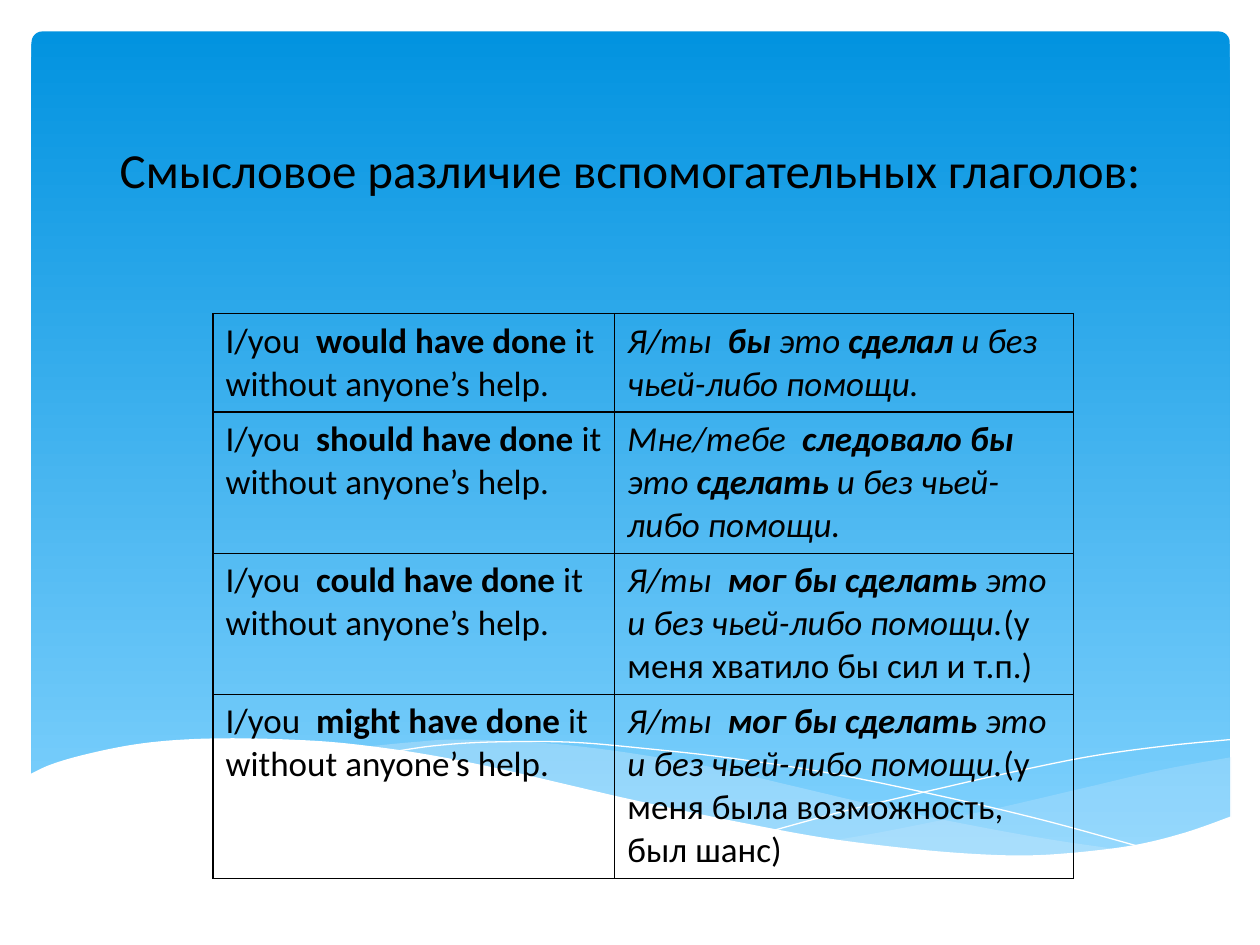
from dataclasses import dataclass
from typing import Optional

from lxml.etree import SubElement
from pptx import Presentation
from pptx.dml.color import RGBColor
from pptx.enum.shapes import MSO_SHAPE
from pptx.enum.text import MSO_ANCHOR, PP_ALIGN
from pptx.oxml.ns import qn
from pptx.util import Inches, Pt

BLACK = RGBColor(0x00, 0x00, 0x00)
WHITE = RGBColor(0xFF, 0xFF, 0xFF)
SKY_TOP = RGBColor(0x02, 0x93, 0xE0)
SKY_BOTTOM = RGBColor(0x83, 0xD3, 0xFE)
PALE_BLUE = RGBColor(0xC6, 0xE7, 0xFC)

TITLE = "Смысловое различие вспомогательных глаголов:"
TITLE_FONT = {"name": "Calibri", "size": Pt(28)}
CELL_FONT = {"name": "Calibri", "size": Pt(20)}
COLUMN_WIDTHS = (3.19, 3.64)
STEPS = 6


@dataclass(frozen=True)
class Wave:
    edges: tuple
    color: RGBColor
    opacity: int = 100
    filled: bool = True


@dataclass(frozen=True)
class Piece:
    text: str
    bold: Optional[bool] = False
    italic: Optional[bool] = True


@dataclass(frozen=True)
class Row:
    modal: str
    translation: tuple
    height: float


WAVES = (
    Wave((((9.77, 6.01), (9.22, 6.11), (8.62, 6.25), (7.8, 6.44), (7.07, 6.59), (6.62, 6.67)),
          ((6.62, 6.67), (7.06, 6.73), (7.58, 6.78), (8.15, 6.8), (8.64, 6.77), (9.07, 6.71),
           (9.44, 6.61), (9.77, 6.49))), PALE_BLUE, 29),
    Wave((((8.94, 6.75), (8.38, 6.67), (7.76, 6.56), (7.07, 6.42), (6.3, 6.24), (5.7, 6.1),
           (5.15, 6), (4.65, 5.93), (4.2, 5.89), (3.62, 5.87), (3.28, 5.89), (2.87, 5.93)),
          ((2.87, 5.93), (3.43, 6.01), (4.05, 6.13), (4.5, 6.24), (5.3, 6.42), (6.02, 6.57),
           (6.66, 6.68), (7.23, 6.76), (7.74, 6.79), (8.19, 6.8), (8.59, 6.79), (8.94, 6.75))),
         PALE_BLUE, 40),
    Wave((((3.1, 5.97), (3.44, 5.92), (3.88, 5.89), (4.51, 5.89), (5.11, 5.94), (5.82, 6.02),
           (6.66, 6.15), (7.61, 6.35), (8.32, 6.52), (9.08, 6.73)),), WHITE, filled=False),
    Wave((((6.14, 6.59), (6.73, 6.43), (7.49, 6.25), (8.07, 6.12), (8.67, 6), (9.25, 5.92),
           (9.76, 5.87)),), WHITE, filled=False),
    Wave((((9.77, 6.48), (9.4, 6.61), (8.99, 6.71), (8.5, 6.77), (8.09, 6.79), (7.61, 6.77),
           (7.08, 6.72), (6.48, 6.64), (5.79, 6.51), (5.03, 6.35), (4.47, 6.22), (3.91, 6.09),
           (3.4, 5.99), (2.92, 5.92), (2.5, 5.88), (1.93, 5.86), (1.46, 5.87), (1.06, 5.91),
           (0.67, 5.99), (0.4, 6.07), (0.23, 6.15)),
          ((0.23, 7.31), (9.77, 7.31))), WHITE),
)

ROWS = (
    Row("would", (Piece("Я/ты  "), Piece("бы", True), Piece(" это "), Piece("сделал", True),
                  Piece(" и без чьей-либо помощи.")), 0.78),
    Row("should", (Piece("Мне/тебе  "), Piece("следовало бы", True), Piece(" это "),
                   Piece("сделать", True), Piece(" и без чьей-либо помощи.")), 1.12),
    Row("could", (Piece("Я/ты  "), Piece("мог бы сделать", True),
                  Piece(" это и без чьей-либо помощи."),
                  Piece("(у меня хватило бы сил и т.п.)", italic=False)), 1.12),
    Row("might", (Piece("Я/ты  "), Piece("мог бы сделать", True),
                  Piece(" это и без чьей-либо помощи."),
                  Piece("(у меня была возможность, был шанс)", italic=False)), 1.46),
)


def smooth(points: tuple) -> list:
    """Return points along a Catmull-Rom curve through the given ones."""
    padded = (points[0], *points, points[-1])
    curve = [points[0]]
    for a, b, c, d in zip(padded, padded[1:], padded[2:], padded[3:]):
        for step in range(1, STEPS + 1):
            t = step / STEPS
            curve.append(tuple(
                q + t * (r - p + t * (2 * p - 5 * q + 4 * r - s + t * (3 * (q - r) + s - p))) / 2
                for p, q, r, s in zip(a, b, c, d)))
    return curve


def draw_sky(slide) -> None:
    shape = slide.shapes.add_shape(MSO_SHAPE.ROUNDED_RECTANGLE, Inches(0.25), Inches(0.25),
                                   Inches(9.51), Inches(6.6))
    shape.adjustments[0] = 0.013
    shape.shadow.inherit = False
    shape.line.fill.background()
    shape.fill.gradient()
    shape.fill.gradient_angle = 270
    for stop, color in zip(shape.fill.gradient_stops, (SKY_TOP, SKY_BOTTOM)):
        stop.color.rgb = color


def draw_wave(slide, wave: Wave) -> None:
    points = [(Inches(x), Inches(y)) for edge in wave.edges for x, y in smooth(edge)]
    builder = slide.shapes.build_freeform(*points[0])
    builder.add_line_segments(points[1:], close=wave.filled)
    shape = builder.convert_to_shape()
    shape.shadow.inherit = False
    painted, empty = (shape.fill, shape.line.fill) if wave.filled else (shape.line.fill, shape.fill)
    empty.background()
    painted.solid()
    painted.fore_color.rgb = wave.color
    if not wave.filled:
        shape.line.width = Pt(0)
    if wave.opacity < 100:
        color = shape.fill._xPr.find(qn("a:solidFill"))[0]
        SubElement(color, qn("a:alpha"), val=str(wave.opacity * 1000))


def write(paragraph, pieces: tuple, font_values: dict) -> None:
    for piece in pieces:
        run = paragraph.add_run()
        run.text = piece.text
        values = {**font_values, "bold": piece.bold, "italic": piece.italic}
        for name, value in values.items():
            setattr(run.font, name, value)
        run.font.color.rgb = BLACK


def draw_title(slide) -> None:
    box = slide.shapes.add_textbox(Inches(0.75), Inches(0.6), Inches(8.5), Inches(1.02))
    frame = box.text_frame
    for name, value in {"word_wrap": True, "vertical_anchor": MSO_ANCHOR.BOTTOM}.items():
        setattr(frame, name, value)
    paragraph = frame.paragraphs[0]
    paragraph.alignment = PP_ALIGN.CENTER
    write(paragraph, (Piece(TITLE, italic=False),), TITLE_FONT)


def add_borders(cell) -> None:
    properties = cell._tc.get_or_add_tcPr()
    for index, side in enumerate(("lnL", "lnR", "lnT", "lnB")):
        line = properties.makeelement(qn(f"a:{side}"), {"w": str(Pt(0.75))})
        fill = SubElement(line, qn("a:solidFill"))
        SubElement(fill, qn("a:srgbClr"), val=str(BLACK))
        properties.insert(index, line)


def draw_table(slide) -> None:
    frame = slide.shapes.add_table(len(ROWS), len(COLUMN_WIDTHS), Inches(1.69), Inches(2.49),
                                   Inches(sum(COLUMN_WIDTHS)),
                                   Inches(sum(row.height for row in ROWS)))
    table = frame.table
    for name in ("first_row", "horz_banding"):
        setattr(table, name, False)
    for column, width in zip(table.columns, COLUMN_WIDTHS):
        column.width = Inches(width)
    for index, row in enumerate(ROWS):
        table.rows[index].height = Inches(row.height)
        english = (Piece("I/you  ", italic=False), Piece(f"{row.modal} have done", True, False),
                   Piece(" it without anyone’s help.", italic=False))
        for cell, pieces in zip(table.rows[index].cells, (english, row.translation)):
            cell.fill.background()
            add_borders(cell)
            write(cell.text_frame.paragraphs[0], pieces, CELL_FONT)


def main() -> None:
    presentation = Presentation()
    presentation.slide_width, presentation.slide_height = Inches(10), Inches(7.5)
    slide = presentation.slides.add_slide(presentation.slide_layouts[6])
    draw_sky(slide)
    for wave in WAVES:
        draw_wave(slide, wave)
    draw_title(slide)
    draw_table(slide)
    presentation.save("out.pptx")


if __name__ == "__main__":
    main()
